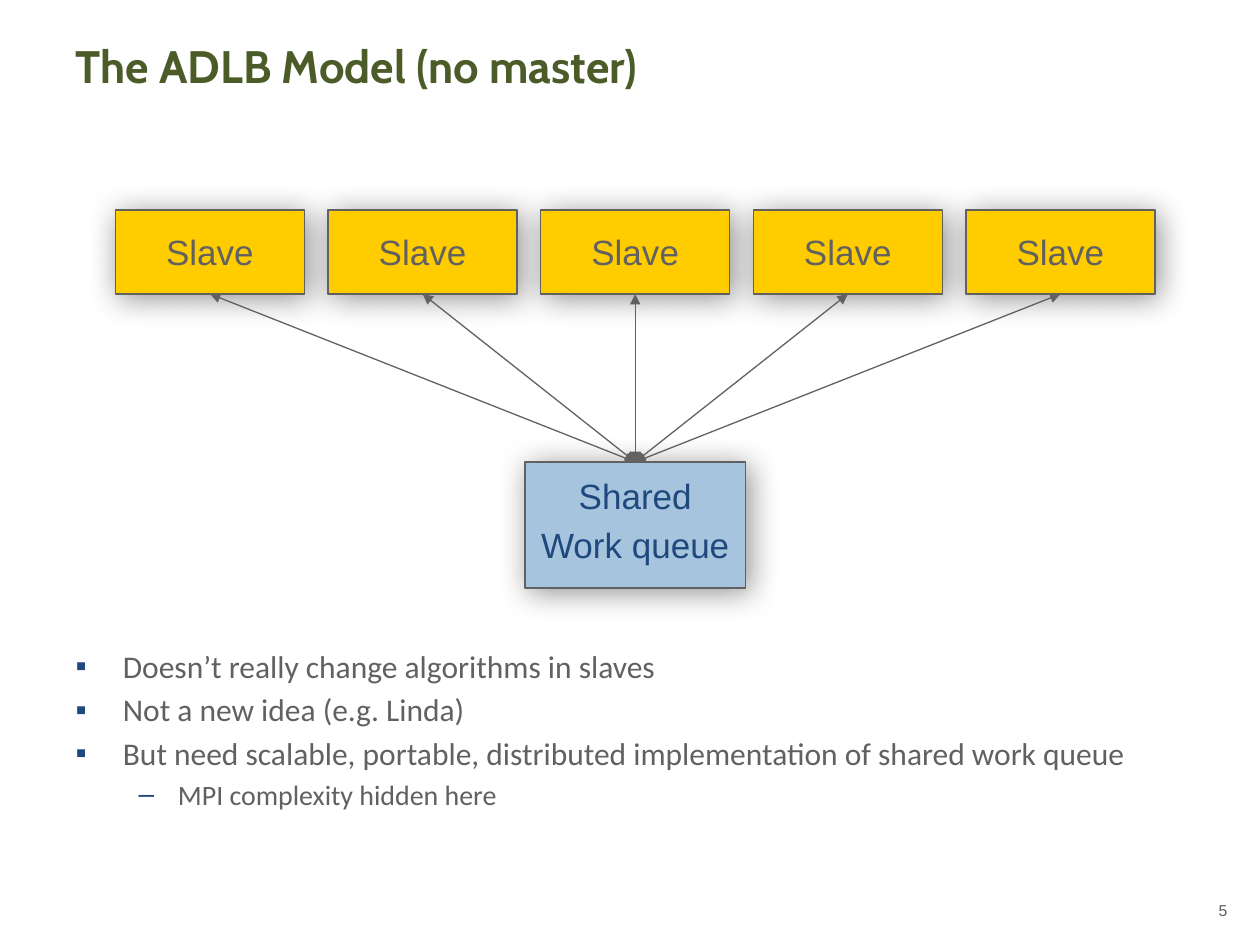
from dataclasses import dataclass

import lxml.etree
import pptx
import pptx.dml.color
import pptx.enum.shapes
import pptx.enum.text
import pptx.oxml.ns
import pptx.util

Pt = pptx.util.Pt
qn = pptx.oxml.ns.qn
ALIGN = pptx.enum.text.PP_ALIGN
ANCHOR = pptx.enum.text.MSO_ANCHOR

COLORS = {
    "title": "4B5C29",
    "text": "616161",
    "navy": "1F497D",
    "slave": "FFCC00",
    "queue": "A6C4DE",
    "shadow": "000000",
}


@dataclass
class Box:
    lines: list[str]
    left: float
    top: float
    width: float
    height: float
    fill: str
    color: str
    line_spacing: float = 1.0


@dataclass
class Bullet:
    text: str
    level: int = 0


@dataclass
class BulletStyle:
    char: str
    size: float
    margin: float
    indent: float


SLAVES = [
    Box(["Slave"], 66 + 121.5 * i, 120, 108, 48, "slave", "text") for i in range(5)
]
QUEUE = Box(["Shared", "Work queue"], 300, 264, 126, 72, "queue", "navy", 0.7)
BULLETS = [
    Bullet("Doesn’t really change algorithms in slaves"),
    Bullet("Not a new idea (e.g. Linda)"),
    Bullet("But need scalable, portable, distributed implementation of shared work queue"),
    Bullet("MPI complexity hidden here", 1),
]
STYLES = [BulletStyle("▪", 18, 27, -27), BulletStyle("–", 16, 58.5, -22.5)]


def rgb(name: str) -> pptx.dml.color.RGBColor:
    return pptx.dml.color.RGBColor.from_string(COLORS[name])


def add_run(p, text: str, font: str, size: float, color: str, bold: bool = False) -> None:
    r = p.add_run()
    r.text = text
    r.font.name = font
    r.font.size = Pt(size)
    r.font.bold = bold
    r.font.color.rgb = rgb(color)


def place(sp, left: float, top: float, width: float, height: float) -> None:
    sp.left, sp.top, sp.width, sp.height = map(Pt, (left, top, width, height))
    tf = sp.text_frame
    tf.word_wrap = True
    tf.auto_size = pptx.enum.text.MSO_AUTO_SIZE.NONE
    tf.vertical_anchor = ANCHOR.TOP


def next_paragraph(tf, index: int):
    return tf.add_paragraph() if index else tf.paragraphs[0]


def add_shadow(sp) -> None:
    sp.shadow.inherit = False
    effects = sp._element.spPr.find(qn("a:effectLst"))
    shadow = lxml.etree.SubElement(
        effects, qn("a:outerShdw"), blurRad=str(Pt(18)), dist=str(Pt(3)),
        dir=str(45 * 60000), algn="ctr", rotWithShape="0")
    color = lxml.etree.SubElement(shadow, qn("a:srgbClr"), val=COLORS["shadow"])
    lxml.etree.SubElement(color, qn("a:alpha"), val="43000")


def add_box(s, box: Box):
    sp = s.shapes.add_shape(
        pptx.enum.shapes.MSO_SHAPE.RECTANGLE,
        Pt(box.left), Pt(box.top), Pt(box.width), Pt(box.height))
    sp.fill.solid()
    sp.fill.fore_color.rgb = rgb(box.fill)
    sp.line.color.rgb = rgb("text")
    sp.line.width = Pt(0.75)
    add_shadow(sp)
    tf = sp.text_frame
    tf.word_wrap = False
    tf.vertical_anchor = ANCHOR.MIDDLE
    for i, text in enumerate(box.lines):
        p = next_paragraph(tf, i)
        p.alignment = ALIGN.CENTER
        p.line_spacing = box.line_spacing
        p.space_before = Pt(11 if i else 0)
        add_run(p, text, "Arial", 20, box.color)
    return sp


def add_arrow(s, slave, queue) -> None:
    line = s.shapes.add_connector(pptx.enum.shapes.MSO_CONNECTOR.STRAIGHT, 0, 0, 0, 0)
    line.begin_connect(slave, 2)
    line.end_connect(queue, 0)
    line.line.color.rgb = rgb("text")
    line.line.width = Pt(0.75)
    ln = line.line._get_or_add_ln()
    for end in ("a:headEnd", "a:tailEnd"):
        lxml.etree.SubElement(ln, qn(end), type="triangle")
    lxml.etree.SubElement(line._element.spPr, qn("a:effectLst"))


def add_bullet(p, bullet: Bullet) -> None:
    style = STYLES[bullet.level]
    p.level = bullet.level
    pPr = p._p.get_or_add_pPr()
    pPr.set("marL", str(Pt(style.margin)))
    pPr.set("indent", str(Pt(style.indent)))
    color = lxml.etree.SubElement(pPr, qn("a:buClr"))
    lxml.etree.SubElement(color, qn("a:srgbClr"), val=COLORS["navy"])
    lxml.etree.SubElement(pPr, qn("a:buFont"), typeface="Arial")
    lxml.etree.SubElement(pPr, qn("a:buChar"), char=style.char)
    add_run(p, bullet.text, "Calibri", style.size, "text")


def main() -> None:
    prs = pptx.Presentation()
    prs.slide_width, prs.slide_height = Pt(720), Pt(540)
    s = prs.slides.add_slide(prs.slide_layouts[1])

    title = s.shapes.title
    place(title, 36, 18, 647, 32)
    p = title.text_frame.paragraphs[0]
    p.alignment = ALIGN.LEFT
    add_run(p, "The ADLB Model (no master)", "Cabin", 26, "title", True)

    body = s.placeholders[1]
    place(body, 36, 366, 647, 144)
    for i, bullet in enumerate(BULLETS):
        p = next_paragraph(body.text_frame, i)
        add_bullet(p, bullet)
        p.space_before = Pt(3.2 if i else 0)

    number = s.shapes.add_textbox(0, 0, 0, 0)
    place(number, 678, 511, 30.5, 29)
    p = number.text_frame.paragraphs[0]
    p.alignment = ALIGN.RIGHT
    add_run(p, "5", "Arial", 9, "text")

    slaves = [add_box(s, box) for box in SLAVES]
    queue = add_box(s, QUEUE)
    for slave in slaves:
        add_arrow(s, slave, queue)

    prs.save("out.pptx")


if __name__ == "__main__":
    main()
